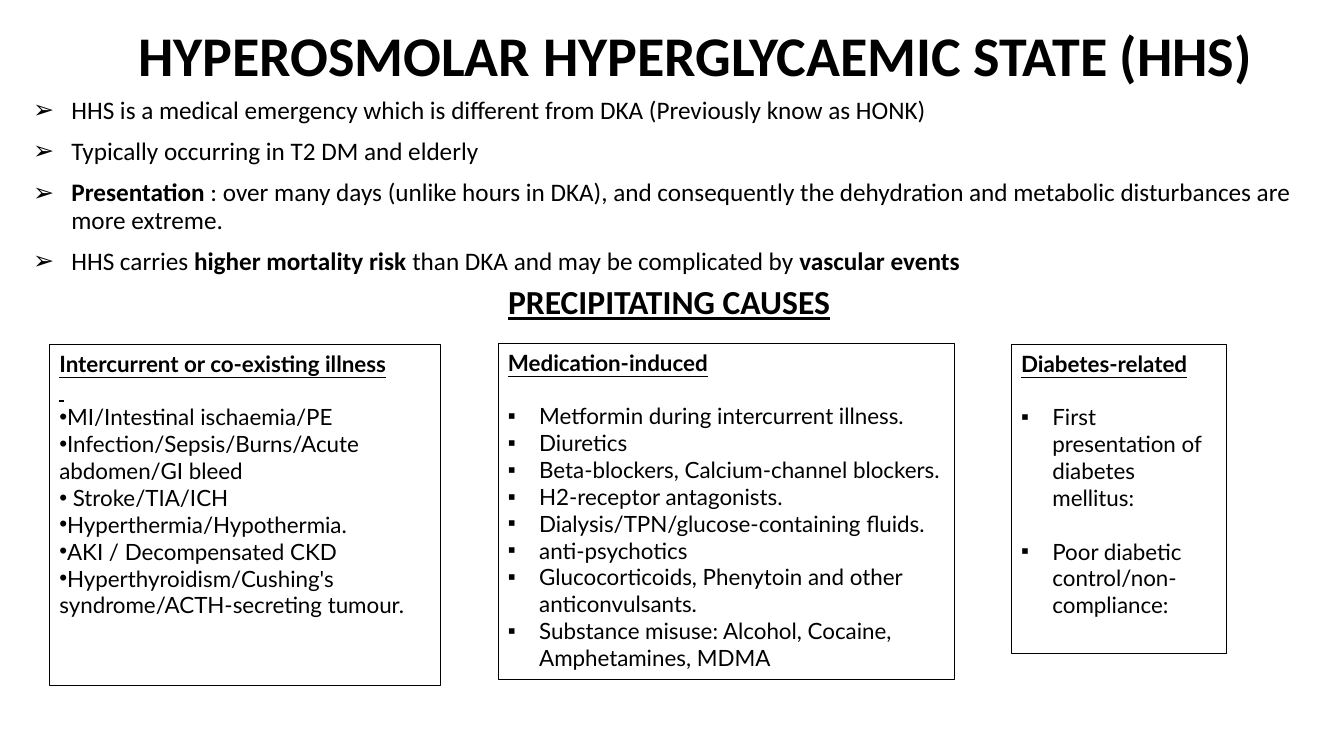
from lxml import etree
from pptx import Presentation
from pptx.dml.color import RGBColor
from pptx.enum.shapes import MSO_SHAPE
from pptx.enum.text import MSO_ANCHOR, MSO_AUTO_SIZE, PP_ALIGN
from pptx.oxml.ns import qn
from pptx.util import Inches, Pt

RECTANGLE = MSO_SHAPE.RECTANGLE
TOP, BOTTOM = MSO_ANCHOR.TOP, MSO_ANCHOR.BOTTOM
LEFT, CENTER = PP_ALIGN.LEFT, PP_ALIGN.CENTER
NO_AUTOFIT = MSO_AUTO_SIZE.NONE


def color(value):
    return RGBColor.from_string(value)


class SlideBuilder:
    ink = "000000"
    body_font = "Calibri"
    box_font = "Lato"
    box_size = 16

    def __init__(self, presentation):
        self.slide = presentation.slides.add_slide(presentation.slide_layouts[5])

    def frame(self, shape, anchor=TOP):
        frame = shape.text_frame
        frame.word_wrap = True
        frame.auto_size = NO_AUTOFIT
        frame.vertical_anchor = anchor
        return frame

    def paragraph(self, frame, first=False, align=LEFT, line=1.0, before=0, after=0):
        paragraph = frame.paragraphs[0] if first else frame.add_paragraph()
        paragraph.alignment = align
        paragraph.line_spacing = line
        paragraph.space_before = Pt(before)
        paragraph.space_after = Pt(after)
        return paragraph

    def run(self, paragraph, text, size, font, bold=False, underline=False):
        run = paragraph.add_run()
        run.text = text
        run.font.size = Pt(size)
        run.font.name = font
        run.font.bold = bold
        run.font.underline = underline
        run.font.color.rgb = color(self.ink)

    def bullet(self, paragraph, character, indent):
        properties = paragraph._p.get_or_add_pPr()
        properties.set("marL", str(Inches(indent)))
        properties.set("indent", str(-Inches(indent)))
        etree.SubElement(properties, qn("a:buFont")).set("typeface", "Arial")
        etree.SubElement(properties, qn("a:buChar")).set("char", character)

    def title(self, text, area):
        shape = self.slide.shapes.title
        shape.left, shape.top, shape.width, shape.height = map(Inches, area)
        paragraph = self.paragraph(self.frame(shape, BOTTOM), True, CENTER, 0.9)
        self.run(paragraph, text, 40, self.body_font, bold=True)

    def heading(self, text, area):
        shape = self.slide.shapes.add_textbox(*map(Inches, area))
        paragraph = self.paragraph(self.frame(shape), True)
        self.run(paragraph, text, 24, self.body_font, bold=True, underline=True)

    def facts(self, facts, area):
        frame = self.frame(self.slide.shapes.add_textbox(*map(Inches, area)))
        for index, runs in enumerate(facts):
            paragraph = self.paragraph(frame, index == 0, line=0.9, before=10)
            self.bullet(paragraph, "➢", 0.38)
            for text, bold in runs:
                self.run(paragraph, text, 18, self.body_font, bold)

    def cause_box(self, heading, causes, area, character="▪", indent=0.31,
                  heading_gap=19.2, cause_gap=0, underlined_break=False):
        shape = self.slide.shapes.add_shape(RECTANGLE, *map(Inches, area))
        shape.shadow.inherit = False
        shape.fill.background()
        shape.line.color.rgb = color(self.ink)
        shape.line.width = Pt(0.75)
        frame = self.frame(shape)
        paragraph = self.paragraph(frame, True, after=heading_gap)
        self.run(paragraph, heading, self.box_size, self.box_font, True, True)
        if underlined_break:
            paragraph.add_line_break()
            self.run(paragraph, " ", self.box_size, self.body_font, underline=True)
        for index, cause in enumerate(causes):
            paragraph = self.paragraph(frame, before=cause_gap if index else 0)
            self.bullet(paragraph, character, indent)
            self.run(paragraph, cause, self.box_size, self.box_font)


def main():
    presentation = Presentation()
    presentation.slide_width = Inches(13.33)
    presentation.slide_height = Inches(7.5)
    builder = SlideBuilder(presentation)

    builder.title("HYPEROSMOLAR HYPERGLYCAEMIC STATE (HHS)", (1.06, 0.34, 11.67, 0.59))
    builder.facts([
        [("HHS is a medical emergency which is different from DKA "
          "(Previously know as HONK)", False)],
        [("Typically occurring in T2 DM and elderly", False)],
        [("Presentation ", True),
         (": over many days (unlike hours in DKA), and consequently the dehydration "
          "and metabolic disturbances are more extreme.", False)],
        [("HHS carries ", False), ("higher mortality risk ", True),
         ("than DKA and may be complicated by ", False), ("vascular events", True)],
    ], (0.23, 0.92, 12.87, 1.81))
    builder.heading("PRECIPITATING CAUSES", (4.94, 2.74, 8.01, 0.5))

    builder.cause_box("Intercurrent or co-existing illness", [
        "MI/Intestinal ischaemia/PE",
        "Infection/Sepsis/Burns/Acute abdomen/GI bleed",
        " Stroke/TIA/ICH",
        "Hyperthermia/Hypothermia.",
        "AKI / Decompensated CKD",
        "Hyperthyroidism/Cushing's syndrome/ACTH-secreting tumour.",
    ], (0.49, 3.42, 3.88, 3.38), character="•", indent=0, heading_gap=0,
        underlined_break=True)
    builder.cause_box("Medication-induced", [
        "Metformin during intercurrent illness.",
        "Diuretics",
        "Beta-blockers, Calcium-channel blockers.",
        "H2-receptor antagonists.",
        "Dialysis/TPN/glucose-containing fluids.",
        "anti-psychotics",
        "Glucocorticoids, Phenytoin and other anticonvulsants.",
        "Substance misuse: Alcohol, Cocaine, Amphetamines, MDMA",
    ], (4.94, 3.41, 4.53, 3.33))
    builder.cause_box("Diabetes-related", [
        "First presentation of diabetes mellitus:",
        "Poor diabetic control/non-compliance:",
    ], (10.03, 3.42, 2.14, 3.06), cause_gap=19.2)

    presentation.save("out.pptx")


if __name__ == "__main__":
    main()
